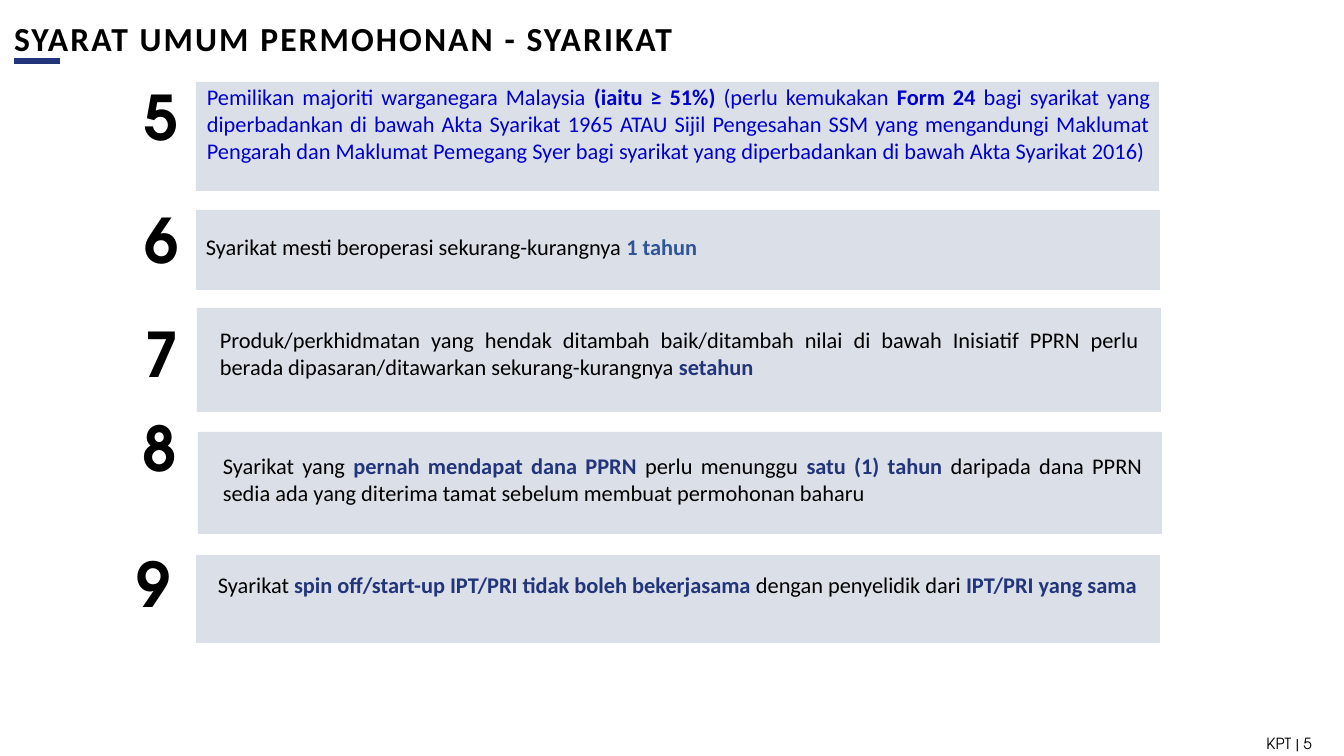
"""Build the slide of company application rules 5 to 9."""
from pptx import Presentation
from pptx import util as u
from pptx.dml.color import RGBColor
from pptx.enum import shapes, text
from pptx.oxml.ns import qn
from lxml import etree

PX = 914400 / 100.8


class Theme:
    """Colours, fonts and type sizes."""
    bar, navy, steel, blue, black = "D6DCE5", "22357B", "2F5597", "0000CC", "000000"
    body, geo = "Calibri", "TeX Gyre Adventor"
    title, num, item, foot = 24, 44, 16, 11


def px(*vals):
    return [u.Emu(round(v * PX)) for v in vals]


def write(box, words, size, face, align, ink=Theme.black, accent=Theme.black, bold=False):
    """Fill a box; parts between bars are bold and in the accent colour."""
    frame = box.text_frame
    frame.word_wrap = True
    para = frame.paragraphs[0]
    para.alignment = align
    for n, part in enumerate(words.split("|") if not bold else [words]):
        run = para.add_run()
        run.text = part
        strong = bold or n % 2 == 1
        run.font.name, run.font.size, run.font.bold = face, u.Pt(size), strong
        run.font.color.rgb = RGBColor.from_string(accent if strong else ink)
    return frame


deck = Presentation()
deck.slide_width, deck.slide_height = px(1344, 756)
slide = deck.slides.add_slide(deck.slide_layouts[5])
items = slide.shapes
Align, Fit = text.PP_ALIGN, text.MSO_AUTO_SIZE

title = items.title
title.left, title.top, title.width, title.height = px(14, 15, 1032, 46)
frame = write(title, "SYARAT UMUM PERMOHONAN - SYARIKAT", Theme.title, Theme.body,
              Align.LEFT, bold=True)
frame.margin_left = frame.margin_right = 0
frame.vertical_anchor = text.MSO_ANCHOR.MIDDLE
frame.auto_size = Fit.NONE
frame.paragraphs[0].runs[0]._r.get_or_add_rPr().set("spc", "150")

rule = items.add_connector(shapes.MSO_CONNECTOR.STRAIGHT, *px(14, 61, 60, 61))
rule.line.color.rgb = RGBColor.from_string(Theme.navy)
rule.line.width = u.Pt(4.5)
etree.SubElement(rule._element.spPr, qn("a:effectLst"))

rules = [
    ((196, 82, 963, 109), (197, 78, 963, 146), (135, 74), Theme.blue, Theme.blue,
     "Pemilikan majoriti warganegara Malaysia |(iaitu ≥ 51%)| (perlu kemukakan |Form 24 |"
     "bagi syarikat yang diperbadankan di bawah Akta Syarikat 1965 ATAU Sijil Pengesahan SSM "
     "yang mengandungi Maklumat Pengarah dan Maklumat Pemegang Syer bagi syarikat yang "
     "diperbadankan di bawah Akta Syarikat 2016)"),
    ((196, 210, 964, 80), (196, 228, 939, 37), (135, 197), Theme.black, Theme.steel,
     "Syarikat mesti beroperasi sekurang-kurangnya |1 tahun"),
    ((197, 308, 964, 104), (210, 321, 939, 65), (135, 311), Theme.black, Theme.navy,
     "Produk/perkhidmatan yang hendak ditambah baik/ditambah nilai di bawah Inisiatif PPRN "
     "perlu berada dipasaran/ditawarkan sekurang-kurangnya |setahun"),
    ((198, 432, 964, 102), (213, 447, 939, 65), (133, 405), Theme.black, Theme.navy,
     "Syarikat yang |pernah mendapat dana PPRN |perlu menunggu |satu (1) tahun |"
     "daripada dana PPRN sedia ada yang diterima tamat sebelum membuat permohonan baharu"),
    ((196, 555, 964, 88), (208, 566, 939, 65), (127, 541), Theme.black, Theme.navy,
     "Syarikat |spin off/start-up IPT/PRI tidak boleh bekerjasama |"
     "dengan penyelidik dari |IPT/PRI yang sama"),
]

for num, (bar, area, spot, ink, accent, words) in enumerate(rules, 5):
    rect = items.add_shape(shapes.MSO_SHAPE.RECTANGLE, *px(*bar))
    rect.shadow.inherit = False
    rect.line.fill.background()
    rect.fill.solid()
    rect.fill.fore_color.rgb = RGBColor.from_string(Theme.bar)
    tint = rect._element.spPr.find(".//" + qn("a:srgbClr"))
    etree.SubElement(tint, qn("a:alpha")).set("val", "86000")

    box = items.add_textbox(*px(*area))
    write(box, words, Theme.item, Theme.body, Align.JUSTIFY, ink, accent)
    box.text_frame.auto_size = Fit.SHAPE_TO_FIT_TEXT

    mark = items.add_textbox(*px(*spot, 38, 85))
    write(mark, str(num), Theme.num, Theme.geo, Align.CENTER, bold=True)
    mark.text_frame.auto_size = Fit.SHAPE_TO_FIT_TEXT

foot = items.add_textbox(*px(1002, 728, 320, 30))
frame = write(foot, "KPT ¦ 5".replace("¦", "|"), Theme.foot, Theme.geo, Align.RIGHT, bold=True)
frame.vertical_anchor = text.MSO_ANCHOR.MIDDLE
frame.paragraphs[0].runs[0].font.bold = False

deck.save("out.pptx")
